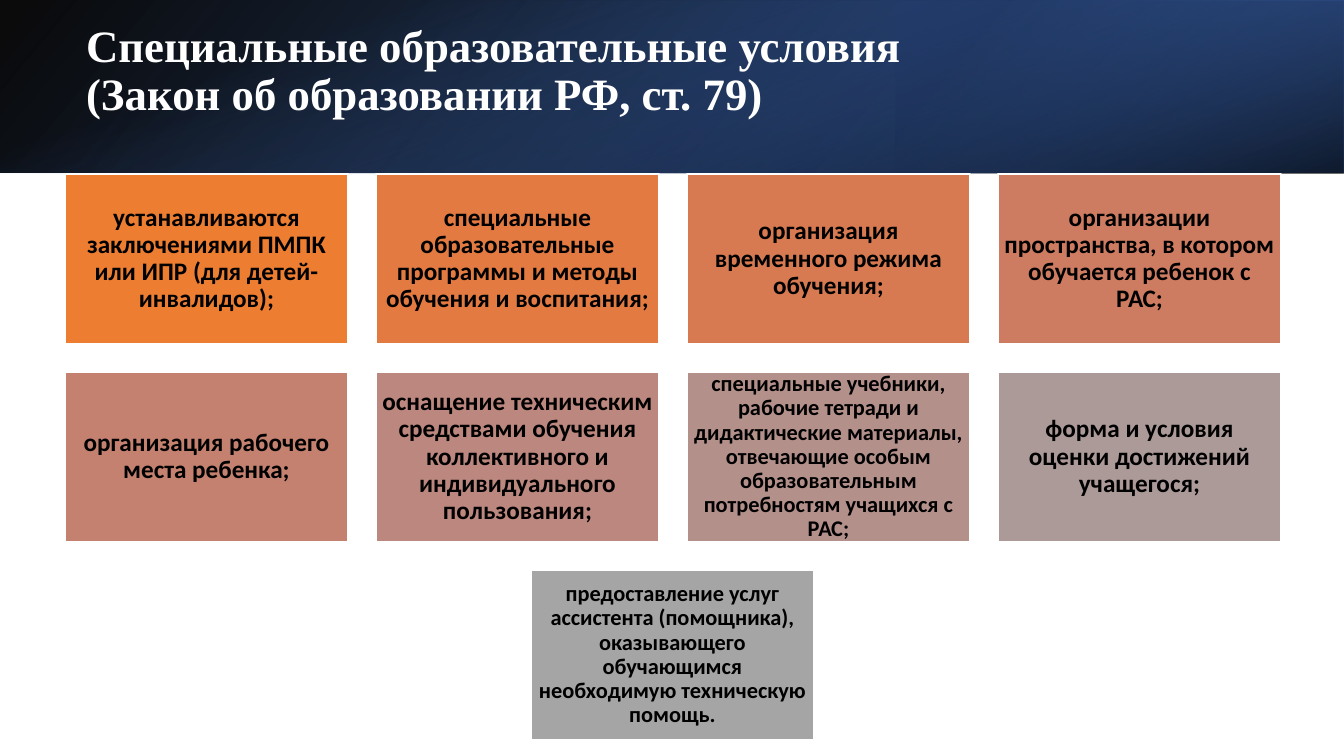
from lxml.etree import SubElement
from pptx import Presentation
from pptx.dml.color import RGBColor
from pptx.enum.shapes import MSO_SHAPE
from pptx.enum.text import MSO_ANCHOR, MSO_AUTO_SIZE, PP_ALIGN
from pptx.oxml.ns import qn
from pptx.util import Emu, Pt


def px(length):
    return Emu(round(length * 914400 / 100.8))


def color(hex_value):
    return RGBColor.from_string(hex_value)


presentation = Presentation()
presentation.slide_width, presentation.slide_height = px(1344), px(756)
slide = presentation.slides.add_slide(presentation.slide_layouts[5])

# Header band: three translucent gradients, stops as (position, color, opacity)
bands = [
    ((0, 0, 1344, 173), 0, True, 140, [(0, "000000", 96), (100, "2F5597", 100)]),
    ((896, 0, 448, 173), 180, True, 320, [(19, "203864", 68), (100, "4472C4", 79)]),
    ((585, -585, 173, 1344), 90, False, 340, [(23, "4472C4", 0), (99, "000000", 74)]),
]
for box, rotation, flipped, angle, stops in bands:
    band = slide.shapes.add_shape(MSO_SHAPE.RECTANGLE, *map(px, box))
    band.shadow.inherit = False
    band.line.fill.background()
    band.rotation = rotation
    properties = band._element.spPr
    if flipped:
        properties.find(qn("a:xfrm")).set("flipH", "1")
    band.fill.gradient()
    gradient = properties.find(qn("a:gradFill"))
    for child in list(gradient):
        gradient.remove(child)
    stop_list = SubElement(gradient, qn("a:gsLst"))
    for position, hex_value, opacity in stops:
        stop = SubElement(stop_list, qn("a:gs"), pos=str(position * 1000))
        stop_color = SubElement(stop, qn("a:srgbClr"), val=hex_value)
        SubElement(stop_color, qn("a:alpha"), val=str(opacity * 1000))
    SubElement(gradient, qn("a:lin"), ang=str(angle * 60000), scaled="0")

# Title, brought in front of the band
title = slide.shapes.title
title.left, title.top, title.width, title.height = map(px, (76, 12, 1107, 120))
slide.shapes._spTree.append(title._element)
title_frame = title.text_frame
title_frame.text = "Специальные образовательные условия\v(Закон об образовании РФ, ст. 79)"
frame_format = {"word_wrap": True, "auto_size": MSO_AUTO_SIZE.NONE,
                "vertical_anchor": MSO_ANCHOR.MIDDLE}
for name, value in frame_format.items():
    setattr(title_frame, name, value)
paragraph = title_frame.paragraphs[0]
paragraph.alignment = PP_ALIGN.LEFT
paragraph.line_spacing = 0.9
title_font = {"name": "Times New Roman", "size": Pt(32), "bold": True}
for run in paragraph.runs:
    for name, value in title_font.items():
        setattr(run.font, name, value)
    run.font.color.rgb = color("FFFFFF")

# Cards: rows of (text, fill, font size), each row centred on the grid
card_rows = [
    [
        ("устанавливаются заключениями ПМПК или ИПР (для детей-инвалидов);", "ED7D31", 18),
        ("специальные образовательные программы и методы обучения и воспитания;", "E27A42", 18),
        ("организация временного режима обучения;", "D87A51", 18),
        ("организации пространства, в котором обучается ребенок с РАС;", "CE7C61", 18),
    ],
    [
        ("организация рабочего места ребенка;", "C48170", 18),
        ("оснащение техническим средствами обучения коллективного и "
         "индивидуального пользования;", "BC877E", 18),
        ("специальные учебники, рабочие тетради и дидактические материалы, отвечающие "
         "особым образовательным потребностям учащихся с РАС;", "B4908B", 16),
        ("форма и условия оценки достижений учащегося;", "AC9A99", 18),
    ],
    [
        ("предоставление услуг ассистента (помощника), оказывающего обучающимся "
         "необходимую техническую помощь.", "A5A5A5", 16),
    ],
]
column_step, row_step = 311, 198
card_frame_format = frame_format | {
    f"margin_{side}": px(6) for side in ("left", "top", "right", "bottom")}
for row, cards in enumerate(card_rows):
    row_left = 65 + (4 - len(cards)) * column_step // 2
    for column, (text, fill, size) in enumerate(cards):
        card = slide.shapes.add_shape(
            MSO_SHAPE.RECTANGLE, px(row_left + column * column_step),
            px(174 + row * row_step), px(283), px(170))
        card.shadow.inherit = False
        card.fill.solid()
        card.fill.fore_color.rgb = color(fill)
        card.line.color.rgb = color("FFFFFF")
        card.line.width = Pt(1)
        for name, value in card_frame_format.items():
            setattr(card.text_frame, name, value)
        paragraph = card.text_frame.paragraphs[0]
        paragraph.text = text
        paragraph.alignment = PP_ALIGN.CENTER
        paragraph.line_spacing = 0.9
        for name, value in {"name": "Calibri", "size": Pt(size), "bold": True}.items():
            setattr(paragraph.font, name, value)
        paragraph.font.color.rgb = color("000000")

presentation.save("out.pptx")
